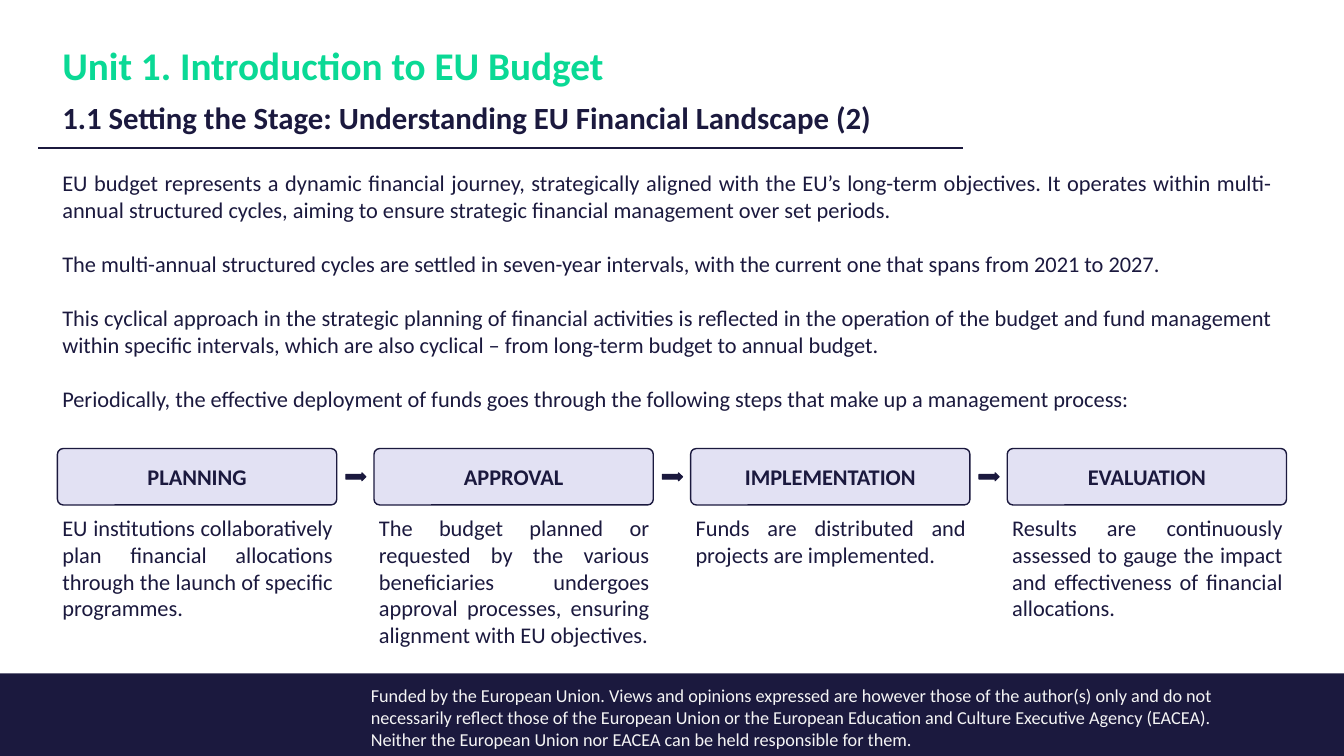
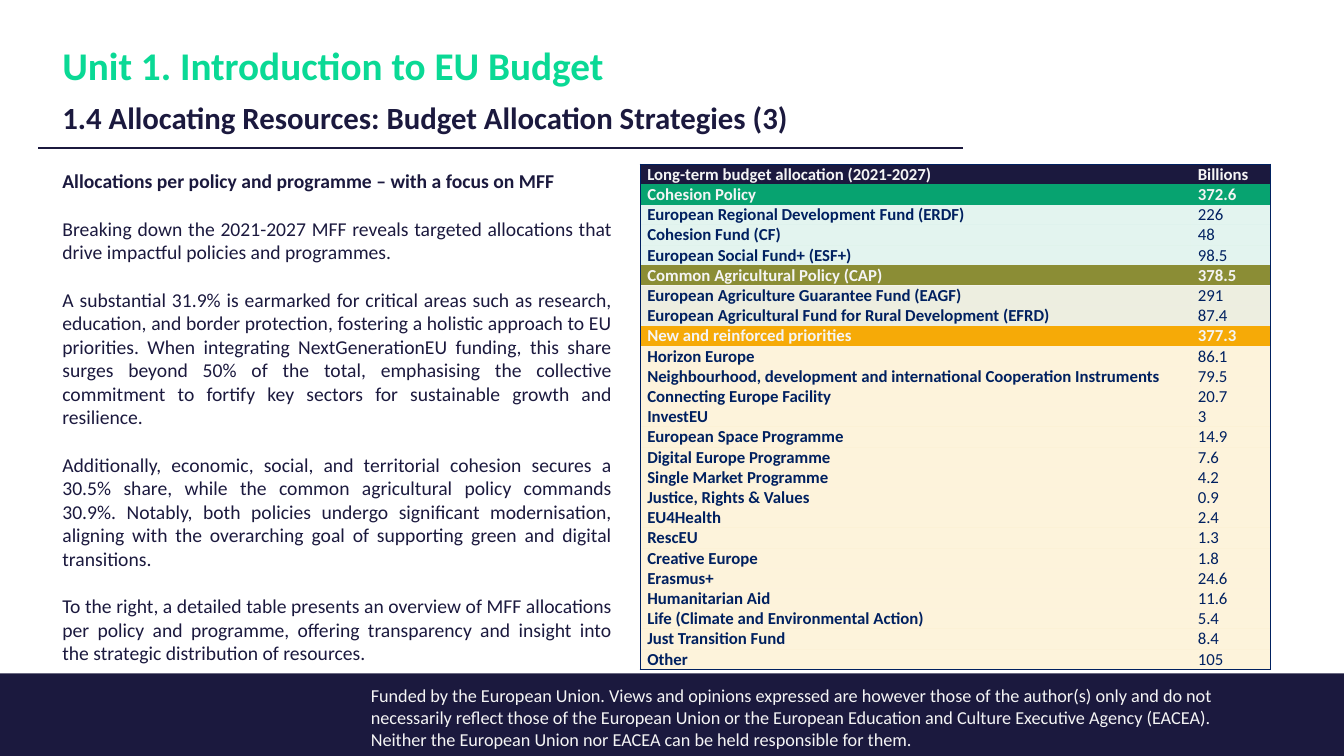
from dataclasses import dataclass

from lxml import etree
from pptx import Presentation
from pptx.dml.color import RGBColor
from pptx.enum.shapes import MSO_CONNECTOR, MSO_SHAPE
from pptx.enum.text import MSO_ANCHOR, PP_ALIGN
from pptx.oxml.ns import qn
from pptx.util import Inches, Pt

RECT = MSO_SHAPE.RECTANGLE
ROUNDED = MSO_SHAPE.ROUNDED_RECTANGLE
RIGHT_ARROW = MSO_SHAPE.RIGHT_ARROW
STRAIGHT = MSO_CONNECTOR.STRAIGHT
TOP, MIDDLE, BOTTOM = MSO_ANCHOR.TOP, MSO_ANCHOR.MIDDLE, MSO_ANCHOR.BOTTOM
LEFT, CENTER, JUSTIFY = PP_ALIGN.LEFT, PP_ALIGN.CENTER, PP_ALIGN.JUSTIFY
PLAIN_TABLE = "{2D5ABB26-0587-4C30-8999-92F81FD0307C}"


@dataclass(frozen=True)
class Theme:
    font: str = "Calibri"
    navy: str = "1B193E"
    green: str = "0AD995"
    lavender: str = "E2E1F3"
    light: str = "F5F5F5"
    table_blue: str = "002060"
    cohesion: str = "07A370"
    agriculture: str = "8B8D35"
    priorities: str = "F6AA07"
    title_size: int = 28
    subtitle_size: int = 22
    body_size: int = 16
    small_body_size: int = 14
    footer_size: int = 13
    table_size: int = 12
    line_height: float = 1.22


THEME = Theme()
UNIT = "Unit 1. Introduction to EU Budget"
DISCLAIMER = (
    "Funded by the European Union. Views and opinions expressed are however those of the "
    "author(s) only and do not necessarily reflect those of the European Union or the European "
    "Education and Culture Executive Agency (EACEA). Neither the European Union nor EACEA can "
    "be held responsible for them."
)

CYCLE_TEXT = [
    "EU budget represents a dynamic financial journey, strategically aligned with the EU’s "
    "long-term objectives. It operates within multi-annual structured cycles, aiming to ensure "
    "strategic financial management over set periods.",
    "The multi-annual structured cycles are settled in seven-year intervals, with the current "
    "one that spans from 2021 to 2027.",
    "This cyclical approach in the strategic planning of financial activities is reflected in "
    "the operation of the budget and fund management within specific intervals, which are also "
    "cyclical – from long-term budget to annual budget.",
    "Periodically, the effective deployment of funds goes through the following steps that make "
    "up a management process:",
]
STEPS = [
    ("PLANNING", "EU institutions collaboratively plan financial allocations through the launch "
                 "of specific programmes."),
    ("APPROVAL", "The budget planned or requested by the various beneficiaries undergoes "
                 "approval processes, ensuring alignment with EU objectives."),
    ("IMPLEMENTATION", "Funds are distributed and projects are implemented."),
    ("EVALUATION", "Results are continuously assessed to gauge the impact and effectiveness of "
                   "financial allocations."),
]
ALLOCATION_TEXT = [
    "Allocations per policy and programme – with a focus on MFF",
    "Breaking down the 2021-2027 MFF reveals targeted allocations that drive impactful policies "
    "and programmes.",
    "A substantial 31.9% is earmarked for critical areas such as research, education, and border "
    "protection, fostering a holistic approach to EU priorities. When integrating "
    "NextGenerationEU funding, this share surges beyond 50% of the total, emphasising the "
    "collective commitment to fortify key sectors for sustainable growth and resilience.",
    "Additionally, economic, social, and territorial cohesion secures a 30.5% share, while the "
    "common agricultural policy commands 30.9%. Notably, both policies undergo significant "
    "modernisation, aligning with the overarching goal of supporting green and digital "
    "transitions.",
    "To the right, a detailed table presents an overview of MFF allocations per policy and "
    "programme, offering transparency and insight into the strategic distribution of resources.",
]
BUDGET_GROUPS = [
    (THEME.navy, 100, ("Long-term budget allocation (2021-2027)", "Billions"), []),
    (THEME.cohesion, 11, ("Cohesion Policy", "372.6"), [
        ("European Regional Development Fund (ERDF)", "226"),
        ("Cohesion Fund (CF)", "48"),
        ("European Social Fund+ (ESF+)", "98.5"),
    ]),
    (THEME.agriculture, 15, ("Common Agricultural Policy (CAP)", "378.5"), [
        ("European Agriculture Guarantee Fund (EAGF)", "291"),
        ("European Agricultural Fund for Rural Development (EFRD)", "87.4"),
    ]),
    (THEME.priorities, 14, ("New and reinforced priorities", "377.3"), [
        ("Horizon Europe", "86.1"),
        ("Neighbourhood, development and international Cooperation Instruments", "79.5"),
        ("Connecting Europe Facility", "20.7"),
        ("InvestEU", "3"),
        ("European Space Programme", "14.9"),
        ("Digital Europe Programme", "7.6"),
        ("Single Market Programme", "4.2"),
        ("Justice, Rights & Values", "0.9"),
        ("EU4Health", "2.4"),
        ("RescEU", "1.3"),
        ("Creative Europe", "1.8"),
        ("Erasmus+", "24.6"),
        ("Humanitarian Aid", "11.6"),
        ("Life (Climate and Environmental Action)", "5.4"),
        ("Just Transition Fund", "8.4"),
        ("Other", "105"),
    ]),
]


def rgb(colour):
    return RGBColor.from_string(colour)


class Deck:
    def __init__(self, theme):
        self.theme = theme
        self.prs = Presentation()
        self.prs.slide_width, self.prs.slide_height = Inches(13.33), Inches(7.5)
        self.slide = None

    def new_slide(self, subtitle):
        t = self.theme
        self.slide = self.prs.slides.add_slide(self.prs.slide_layouts[6])
        self.shape(RECT, 0, 6.68, 13.33, 0.82, t.navy)
        self.text([DISCLAIMER], 3.58, 6.74, 8.84, 0.76, t.footer_size, t.light, align=LEFT)
        self.rule(0.38, 1.47, 9.55)
        heading = self.text([UNIT, subtitle], 0.52, 0.5, 9.98, 0.9, t.subtitle_size,
                            align=LEFT, anchor=BOTTOM, gap=10)
        for paragraph in heading:
            paragraph.line_spacing = 0.9
            paragraph.font.bold = True
        self.style(heading[0], t.title_size, t.green, True, LEFT)

    def style(self, paragraph, size, colour, bold=False, align=JUSTIFY):
        paragraph.alignment = align
        font = paragraph.font
        font.name, font.size, font.bold = self.theme.font, Pt(size), bold
        font.color.rgb = rgb(colour)

    def text(self, lines, x, y, w, h, size, colour=None, align=JUSTIFY, anchor=TOP, gap=None):
        box = self.slide.shapes.add_textbox(Inches(x), Inches(y), Inches(w), Inches(h))
        frame = box.text_frame
        frame.word_wrap, frame.vertical_anchor = True, anchor
        if gap is None:
            gap = size * self.theme.line_height
        for i, line in enumerate(lines):
            paragraph = frame.add_paragraph() if i else frame.paragraphs[0]
            paragraph.text = line
            if i:
                paragraph.space_before = Pt(gap)
            self.style(paragraph, size, colour or self.theme.navy, align=align)
        return frame.paragraphs

    def shape(self, kind, x, y, w, h, fill, line_width=None):
        shape = self.slide.shapes.add_shape(kind, Inches(x), Inches(y), Inches(w), Inches(h))
        shape.shadow.inherit = False
        shape.fill.solid()
        shape.fill.fore_color.rgb = rgb(fill)
        if line_width:
            shape.line.color.rgb = rgb(self.theme.navy)
            shape.line.width = Pt(line_width)
        else:
            shape.line.fill.background()
        return shape

    def rule(self, x, y, x_end):
        line = self.slide.shapes.add_connector(STRAIGHT, Inches(x), Inches(y),
                                               Inches(x_end), Inches(y))
        line.line.color.rgb = rgb(self.theme.navy)
        line.line.width = Pt(1)
        etree.SubElement(line._element.spPr, qn("a:effectLst"))

    def step(self, label, x, y):
        step = self.shape(ROUNDED, x, y, 2.77, 0.56, self.theme.lavender, 1)
        step.adjustments[0] = 0.1
        step.text_frame.vertical_anchor = MIDDLE
        paragraph = step.text_frame.paragraphs[0]
        paragraph.text = label
        self.style(paragraph, self.theme.body_size, self.theme.navy, True, CENTER)

    def arrow(self, x, y):
        arrow = self.shape(RIGHT_ARROW, x, y, 0.2, 0.08, self.theme.navy, 0.75)
        arrow.adjustments[0] = 0.6

    def border(self, cell, sides):
        properties = cell._tc.get_or_add_tcPr()
        for side in sides:
            edge = etree.SubElement(properties, qn(f"a:ln{side}"), w=str(Pt(1)))
            fill = etree.SubElement(edge, qn("a:solidFill"))
            etree.SubElement(fill, qn("a:srgbClr"), val=self.theme.table_blue)

    def cell(self, cell, content, fill, opacity, colour, bold):
        cell.margin_left = cell.margin_right = Inches(0.07)
        cell.margin_top = cell.margin_bottom = 0
        cell.fill.solid()
        cell.fill.fore_color.rgb = rgb(fill)
        if opacity < 100:
            tint = cell._tc.tcPr.find(f"{qn('a:solidFill')}/{qn('a:srgbClr')}")
            etree.SubElement(tint, qn("a:alpha"), val=str(opacity * 1000))
        paragraph = cell.text_frame.paragraphs[0]
        paragraph.text = content
        self.style(paragraph, self.theme.table_size, colour, bold)

    def budget_table(self, groups, x, y, widths, row_height):
        t = self.theme
        rows = []
        for fill, opacity, total, items in groups:
            rows.append((total, fill, 100, t.light, True))
            rows += [(item, fill, opacity, t.table_blue, False) for item in items]
        table = self.slide.shapes.add_table(
            len(rows), len(widths), Inches(x), Inches(y),
            Inches(sum(widths)), Inches(row_height * len(rows))).table
        table.first_row = table.horz_banding = False
        table._tbl.tblPr.find(qn("a:tableStyleId")).text = PLAIN_TABLE
        for column, width in zip(table.columns, widths):
            column.width = Inches(width)
        for r, (contents, fill, opacity, colour, is_total) in enumerate(rows):
            table.rows[r].height = Inches(row_height)
            for c, content in enumerate(contents):
                cell = table.cell(r, c)
                sides = "R" if c else "L"
                sides += "T" if r == 0 else ""
                sides += "B" if r == len(rows) - 1 else ""
                self.border(cell, sides)
                self.cell(cell, content, fill, opacity, colour, is_total or c == 0)


def main():
    deck = Deck(THEME)

    deck.new_slide("1.1 Setting the Stage: Understanding EU Financial Landscape (2)")
    deck.text(CYCLE_TEXT, 0.52, 1.63, 12.2, 3.06, THEME.body_size)
    pitch = 3.14
    for i, (label, description) in enumerate(STEPS):
        offset = i * pitch
        deck.step(label, 0.57 + offset, 4.45)
        deck.text([description], 0.52 + offset, 5.05, 2.88, 1.45, THEME.body_size)
        if i:
            deck.arrow(0.29 + offset, 4.69)

    deck.new_slide("1.4 Allocating Resources: Budget Allocation Strategies (3)")
    deck.budget_table(BUDGET_GROUPS, 6.35, 1.63, [5.46, 0.79], 0.2)
    allocations = deck.text(ALLOCATION_TEXT, 0.52, 1.63, 5.65, 5.05, THEME.small_body_size)
    allocations[0].font.bold = True

    deck.prs.save("out.pptx")


if __name__ == "__main__":
    main()
